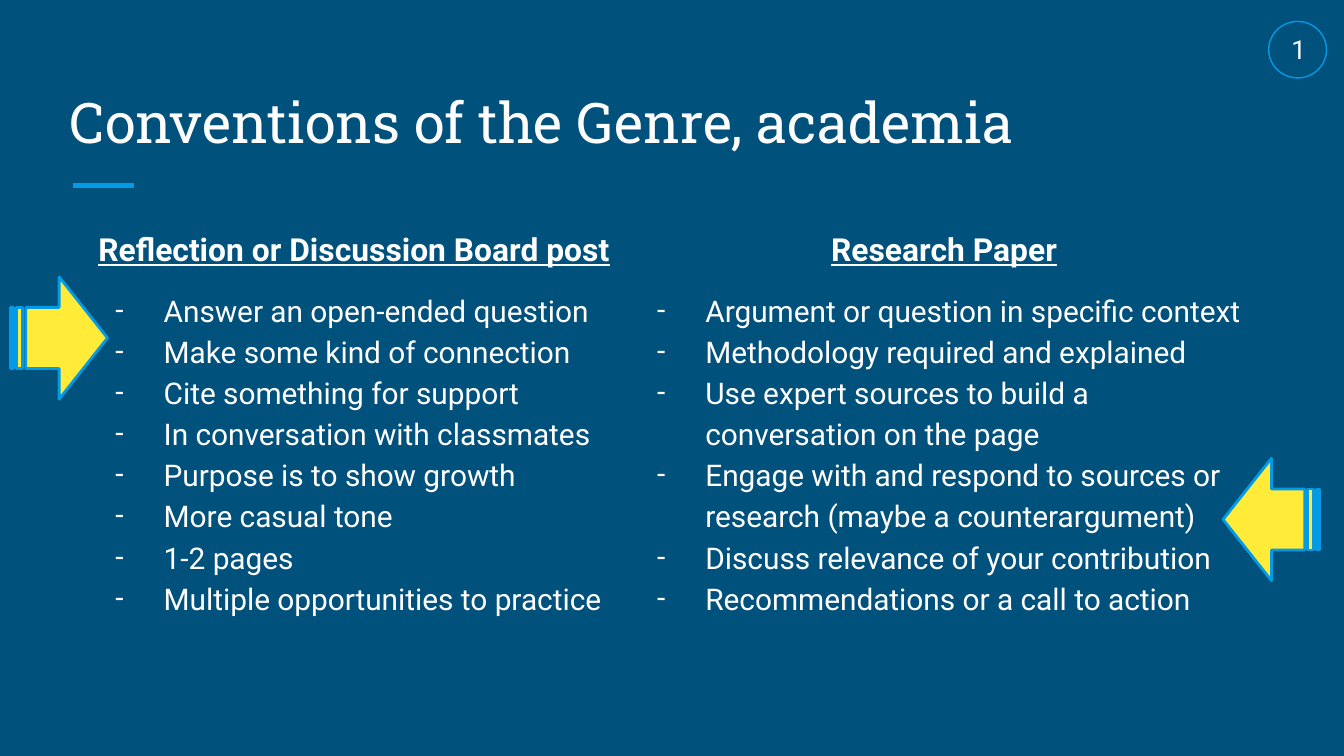
from lxml import etree
from pptx import Presentation
from pptx.dml.color import RGBColor
from pptx.enum import shapes, text
from pptx.oxml import ns
from pptx.util import Inches, Pt

NAVY = RGBColor(0x00, 0x51, 0x7C)
BLUE = RGBColor(0x03, 0x9B, 0xE5)
YELLOW = RGBColor(0xFF, 0xEB, 0x38)
WHITE = RGBColor(0xFF, 0xFF, 0xFF)


def set_font(paragraph, size, name="Roboto"):
    for run in paragraph.runs:
        run.font.name = name
        run.font.size = Pt(size)
        run.font.color.rgb = WHITE


def add_dash(paragraph):
    """Give the paragraph a hanging white dash as its bullet."""
    props = paragraph._p.get_or_add_pPr()
    props.set("marL", str(Inches(0.5)))
    props.set("indent", str(Inches(-0.36)))
    color = etree.SubElement(props, ns.qn("a:buClr"))
    etree.SubElement(color, ns.qn("a:srgbClr"), val=str(WHITE))
    etree.SubElement(props, ns.qn("a:buFont"), typeface="Roboto")
    etree.SubElement(props, ns.qn("a:buChar"), char="-")


# A 16:9 slide
prs = Presentation()
prs.slide_width = Inches(10)
prs.slide_height = Inches(10) * 9 // 16
slide = prs.slides.add_slide(prs.slide_layouts[5])
slide.background.fill.solid()
slide.background.fill.fore_color.rgb = NAVY

# Title and the short rule below it
rule = slide.shapes.add_connector(
    shapes.MSO_CONNECTOR.STRAIGHT,
    Inches(0.54), Inches(1.38), Inches(1), Inches(1.38))
rule.line.color.rgb = BLUE
rule.line.width = Pt(3)
etree.SubElement(rule._element.spPr, ns.qn("a:effectLst"))

title = slide.shapes.title
title.left, title.top = Inches(0.42), Inches(0.5)
title.width, title.height = Inches(9.15), Inches(0.75)
title.text_frame.text = "Conventions of the Genre, academia"
title.text_frame.auto_size = text.MSO_AUTO_SIZE.NONE
title.text_frame.vertical_anchor = text.MSO_ANCHOR.BOTTOM
heading = title.text_frame.paragraphs[0]
heading.alignment = text.PP_ALIGN.LEFT
set_font(heading, 30, "Roboto Slab")

# Two columns: left, width, height, heading, points
columns = [
    (0.62, 4.03, 3.25, "Reflection or Discussion Board post", [
        "Answer an open-ended question",
        "Make some kind of connection",
        "Cite something for support",
        "In conversation with classmates",
        "Purpose is to show growth",
        "More casual tone",
        "1-2 pages",
        "Multiple opportunities to practice",
    ]),
    (4.65, 4.75, 3.39, "Research Paper", [
        "Argument or question in specific context",
        "Methodology required and explained",
        "Use expert sources to build a conversation on the page",
        "Engage with and respond to sources or research "
        "(maybe a counterargument)",
        "Discuss relevance of your contribution",
        "Recommendations or a call to action",
    ]),
]
text_frames = []
for left, width, height, genre, points in columns:
    column = slide.shapes.add_textbox(
        Inches(left), Inches(1.57), Inches(width), Inches(height))
    frame = column.text_frame
    frame.word_wrap = True
    text_frames.append(frame)
    frame.text = genre
    heading = frame.paragraphs[0]
    heading.alignment = text.PP_ALIGN.CENTER
    heading.line_spacing = 1.15
    set_font(heading, 17)
    heading.runs[0].font.bold = True
    heading.runs[0].font.underline = True
    for index, point in enumerate(points):
        paragraph = frame.add_paragraph()
        paragraph.text = point
        paragraph.line_spacing = 1.15
        paragraph.space_before = Pt(10 if index == 0 else 0)
        set_font(paragraph, 16)
        add_dash(paragraph)

# Arrows pointing inwards from both edges
for left, top, rotation in [(9.1, 3.41, 180), (0.08, 2.06, 0)]:
    arrow = slide.shapes.add_shape(
        shapes.MSO_SHAPE.STRIPED_RIGHT_ARROW,
        Inches(left), Inches(top), Inches(0.72), Inches(0.91))
    arrow.rotation = rotation
    arrow.shadow.inherit = False
    arrow.fill.solid()
    arrow.fill.fore_color.rgb = YELLOW
    arrow.line.color.rgb = BLUE
    arrow.line.width = Pt(1.5)

# Circled page number
number = slide.shapes.add_textbox(
    Inches(9.51), Inches(0.15), Inches(0.29), Inches(0.44))
number.text_frame.text = "1"
set_font(number.text_frame.paragraphs[0], 14)
text_frames.append(number.text_frame)

circle = slide.shapes.add_shape(
    shapes.MSO_SHAPE.OVAL,
    Inches(9.44), Inches(0.16), Inches(0.43), Inches(0.42))
circle.shadow.inherit = False
circle.fill.background()
circle.line.color.rgb = BLUE
circle.line.width = Pt(0.75)

for frame in [title.text_frame, *text_frames]:
    frame.margin_left = frame.margin_right = Inches(0.1)
    frame.margin_top = frame.margin_bottom = Inches(0.1)

prs.save("out.pptx")
